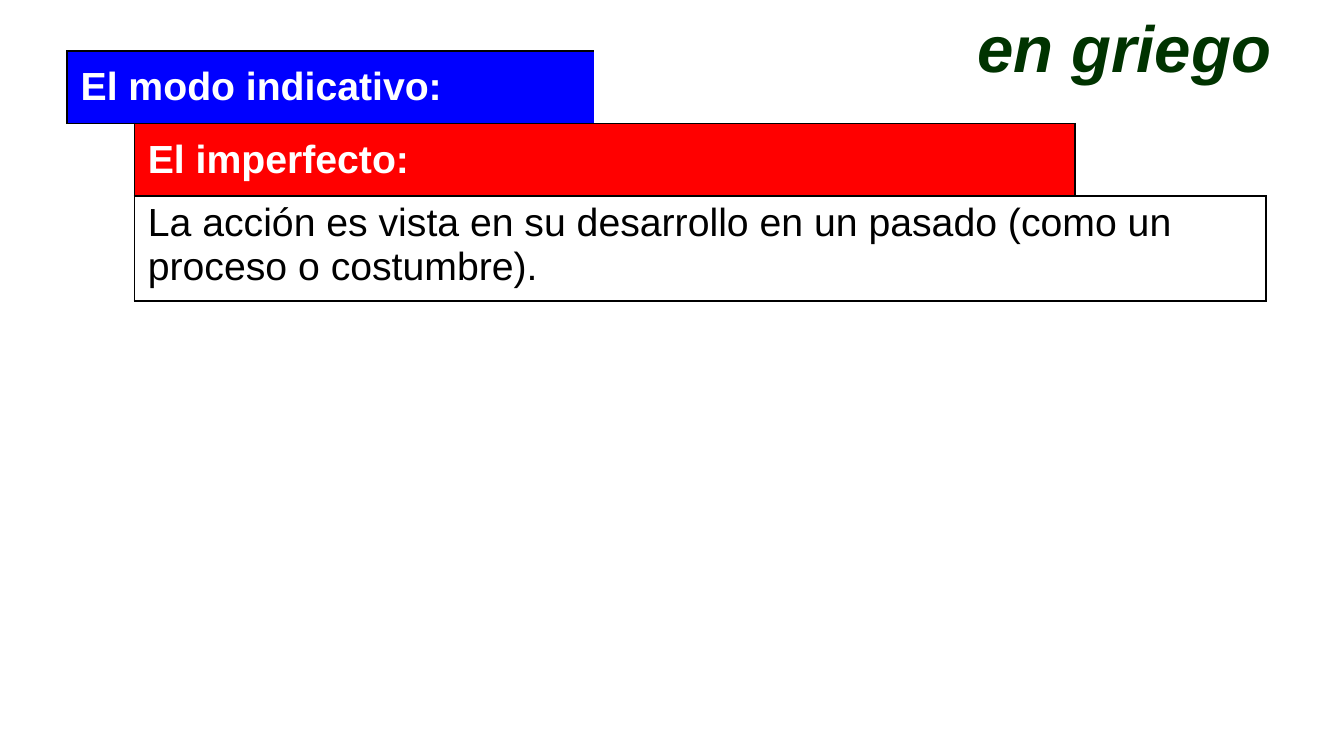
from dataclasses import dataclass

from lxml.etree import SubElement
from pptx import Presentation
from pptx.dml.color import RGBColor
from pptx.enum.text import MSO_ANCHOR, MSO_AUTO_SIZE, PP_ALIGN
from pptx.oxml.ns import qn
from pptx.util import Inches, Pt


@dataclass(frozen=True)
class Theme:
    font: str = "Arial"
    title_size: int = 35
    body_size: int = 21
    border_width: int = 1
    title: str = "003300"
    mood: str = "0000FF"
    tense: str = "FF0000"
    heading: str = "FFFFFF"
    body: str = "000000"
    border: str = "000000"


class GrammarSlide:
    def __init__(self, slide, theme):
        self.slide = slide
        self.theme = theme

    def run(self, paragraph, text, size, color, bold=False, italic=False):
        run = paragraph.add_run()
        run.text = text
        run.font.name = self.theme.font
        run.font.size = Pt(size)
        run.font.bold = bold
        run.font.italic = italic
        run.font.color.rgb = RGBColor.from_string(color)

    def title(self, text, left, top, width, height):
        title = self.slide.shapes.title
        title.left, title.top = Inches(left), Inches(top)
        title.width, title.height = Inches(width), Inches(height)
        frame = title.text_frame
        frame.word_wrap = True
        frame.auto_size = MSO_AUTO_SIZE.SHAPE_TO_FIT_TEXT
        frame.vertical_anchor = MSO_ANCHOR.TOP
        paragraph = frame.paragraphs[0]
        paragraph.alignment = PP_ALIGN.LEFT
        self.run(paragraph, text, self.theme.title_size, self.theme.title, True, True)

    def table(self, left, top, widths, heights):
        table = self.slide.shapes.add_table(
            len(heights), len(widths), Inches(left), Inches(top),
            Inches(sum(widths)), Inches(sum(heights))).table
        table.first_row = False
        table.horz_banding = False
        for column, width in zip(table.columns, widths):
            column.width = Inches(width)
        for row, height in zip(table.rows, heights):
            row.height = Inches(height)
        return table

    def cell(self, cell, sides, fill=None):
        cell.margin_left = cell.margin_right = Inches(0.1)
        cell.margin_top = cell.margin_bottom = Inches(0.04)
        properties = cell._tc.get_or_add_tcPr()
        for side in "LRTB":
            line = SubElement(properties, qn(f"a:ln{side}"), w=str(Pt(self.theme.border_width)))
            if side in sides:
                color = SubElement(line, qn("a:solidFill"))
                SubElement(color, qn("a:srgbClr"), val=self.theme.border)
            else:
                SubElement(line, qn("a:noFill"))
        if fill:
            cell.fill.solid()
            cell.fill.fore_color.rgb = RGBColor.from_string(fill)
        else:
            cell.fill.background()

    def cell_text(self, cell, text, color, bold=False):
        paragraph = cell.text_frame.paragraphs[0]
        paragraph.space_before = Pt(self.theme.body_size * 0.2)
        self.run(paragraph, text, self.theme.body_size, color, bold)

    def heading(self, cell, text, fill, sides):
        self.cell(cell, sides, fill)
        cell.vertical_anchor = MSO_ANCHOR.MIDDLE
        self.cell_text(cell, text, self.theme.heading, bold=True)


def main():
    presentation = Presentation()
    presentation.slide_width = Inches(10)
    presentation.slide_height = Inches(10 * 9 / 16)
    theme = Theme()
    page = GrammarSlide(presentation.slides.add_slide(presentation.slide_layouts[5]), theme)
    page.title("en griego", 7.17, 0, 2.53, 0.69)

    heading_height = 0.54
    mood_top = 0.38

    tense = page.table(1, mood_top + heading_height, [7, 1.42], [heading_height, 0.77])
    page.heading(tense.cell(0, 0), "El imperfecto:", theme.tense, "LRTB")
    page.cell(tense.cell(0, 1), "LB")
    definition = tense.cell(1, 0)
    definition.merge(tense.cell(1, 1))
    page.cell(definition, "LRTB")
    page.cell(tense.cell(1, 1), "RTB")
    page.cell_text(
        definition,
        "La acción es vista en su desarrollo en un pasado (como un proceso o costumbre).",
        theme.body)

    mood = page.table(0.5, mood_top, [3.92], [heading_height])
    page.heading(mood.cell(0, 0), "El modo indicativo:", theme.mood, "LTB")

    presentation.save("out.pptx")


if __name__ == "__main__":
    main()
